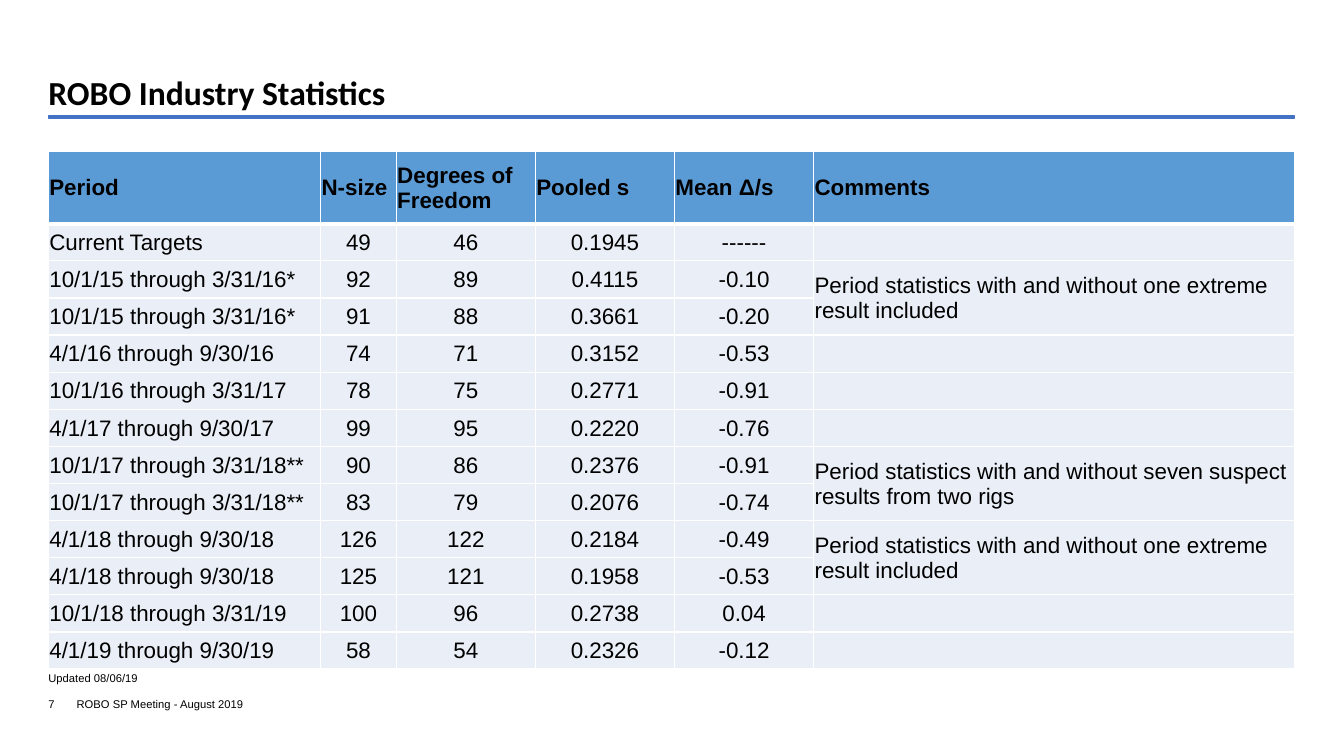
from lxml.etree import SubElement
from pptx import Presentation
from pptx.dml.color import RGBColor
from pptx.enum.shapes import MSO_SHAPE
from pptx.enum.text import MSO_ANCHOR, MSO_AUTO_SIZE, PP_ALIGN
from pptx.oxml.ns import qn
from pptx.util import Pt

EMU_PER_PX = 9144
BLACK = RGBColor(0x00, 0x00, 0x00)
WHITE = RGBColor(0xFF, 0xFF, 0xFF)
RULE_BLUE = RGBColor(0x44, 0x72, 0xC4)
HEADER_BLUE = RGBColor(0x5B, 0x9B, 0xD5)
BODY_BLUE = RGBColor(0xEA, 0xEF, 0xF7)

TITLE_FONT = {"name": "Calibri", "size": Pt(24), "bold": True}
HEADER_FONT = {"name": "Arial", "size": Pt(16), "bold": True}
BODY_FONT = {"name": "Arial", "size": Pt(16), "bold": False}
SMALL_FONT = {"name": "Arial", "size": Pt(8), "bold": False}

COLUMN_WIDTHS = [270, 75, 138, 138, 138, 477]
HEADER_HEIGHT = 72
HEADERS = ["Period", "N-size", "Degrees of Freedom", "Pooled s", "Mean Δ/s", "Comments"]
STATISTICS = [
    ["Current Targets", "49", "46", "0.1945", "------"],
    ["10/1/15 through 3/31/16*", "92", "89", "0.4115", "-0.10"],
    ["10/1/15 through 3/31/16*", "91", "88", "0.3661", "-0.20"],
    ["4/1/16 through 9/30/16", "74", "71", "0.3152", "-0.53"],
    ["10/1/16 through 3/31/17", "78", "75", "0.2771", "-0.91"],
    ["4/1/17 through 9/30/17", "99", "95", "0.2220", "-0.76"],
    ["10/1/17 through 3/31/18**", "90", "86", "0.2376", "-0.91"],
    ["10/1/17 through 3/31/18**", "83", "79", "0.2076", "-0.74"],
    ["4/1/18 through 9/30/18", "126", "122", "0.2184", "-0.49"],
    ["4/1/18 through 9/30/18", "125", "121", "0.1958", "-0.53"],
    ["10/1/18 through 3/31/19", "100", "96", "0.2738", "0.04"],
    ["4/1/19 through 9/30/19", "58", "54", "0.2326", "-0.12"],
]
# First table row of each two-row comment
COMMENTS = {
    2: "Period statistics with and without one extreme result included",
    7: "Period statistics with and without seven suspect results from two rigs",
    9: "Period statistics with and without one extreme result included",
}


def px(length):
    return round(length * EMU_PER_PX)


def set_values(target, values):
    for name, value in values.items():
        setattr(target, name, value)


def write(text_frame, text, font, alignment=PP_ALIGN.LEFT):
    paragraph = text_frame.paragraphs[0]
    paragraph.alignment = alignment
    run = paragraph.add_run()
    run.text = text
    set_values(run.font, font)
    run.font.color.rgb = BLACK


def format_frame(text_frame, anchor, wrap=True):
    set_values(text_frame, {
        "margin_left": 0, "margin_top": 0, "margin_right": 0, "margin_bottom": 0,
        "word_wrap": wrap, "auto_size": MSO_AUTO_SIZE.NONE, "vertical_anchor": anchor,
    })


def add_title(slide, left, top, width, height):
    title = slide.shapes.title
    set_values(title, {"left": px(left), "top": px(top), "width": px(width), "height": px(height)})
    format_frame(title.text_frame, MSO_ANCHOR.BOTTOM)
    write(title.text_frame, "ROBO Industry Statistics", TITLE_FONT)


def add_title_rule(slide, left, top, width, height):
    rule = slide.shapes.add_shape(MSO_SHAPE.RECTANGLE, px(left), px(top), px(width), px(height))
    rule.shadow.inherit = False
    rule.fill.solid()
    rule.fill.fore_color.rgb = RULE_BLUE
    rule.line.color.rgb = RULE_BLUE
    rule.line.width = Pt(1)


def add_small_text(slide, text, left, top, width, height, wrap=True):
    box = slide.shapes.add_textbox(px(left), px(top), px(width), px(height))
    format_frame(box.text_frame, MSO_ANCHOR.TOP, wrap)
    write(box.text_frame, text, SMALL_FONT)


def add_borders(cell, widths):
    """Draw white cell edges; widths maps each edge tag to points."""
    properties = cell._tc.get_or_add_tcPr()
    for tag, width in widths.items():
        line = SubElement(properties, qn(tag), w=str(Pt(width)))
        fill = SubElement(line, qn("a:solidFill"))
        SubElement(fill, qn("a:srgbClr"), val=str(WHITE))


def format_cell(cell, row):
    add_borders(cell, {
        "a:lnL": 1, "a:lnR": 1,
        "a:lnT": 3 if row == 1 else 1,
        "a:lnB": 3 if row == 0 else 1,
    })
    cell.fill.solid()
    cell.fill.fore_color.rgb = BODY_BLUE if row else HEADER_BLUE
    set_values(cell, {
        "margin_left": px(1), "margin_top": px(1), "margin_right": px(1), "margin_bottom": 0,
        "vertical_anchor": MSO_ANCHOR.MIDDLE,
    })


def add_statistics_table(slide, left, top, width, height):
    rows = [HEADERS] + [
        values + [COMMENTS.get(row, "")] for row, values in enumerate(STATISTICS, 1)
    ]
    frame = slide.shapes.add_table(
        len(rows), len(HEADERS), px(left), px(top), px(width), px(height))
    table = frame.table
    set_values(table, {"first_row": False, "horz_banding": False})
    for column, column_width in zip(table.columns, COLUMN_WIDTHS):
        column.width = px(column_width)
    body_height = (height - HEADER_HEIGHT) / len(STATISTICS)
    comment_column = len(HEADERS) - 1
    for row, values in enumerate(rows):
        table.rows[row].height = px(body_height if row else HEADER_HEIGHT)
        for column, text in enumerate(values):
            cell = table.cell(row, column)
            format_cell(cell, row)
            centred = row > 0 and 0 < column < comment_column
            if text:
                write(cell.text_frame, text, BODY_FONT if row else HEADER_FONT,
                      PP_ALIGN.CENTER if centred else PP_ALIGN.LEFT)
    for row in COMMENTS:
        table.cell(row, comment_column).merge(table.cell(row + 1, comment_column))


def add_footer(slide, left, top, width, height):
    number_width = 28
    add_small_text(slide, "7", left, top, number_width, height, wrap=False)
    add_small_text(slide, "ROBO SP Meeting - August 2019",
                   left + number_width, top, width - number_width, height)


def main():
    presentation = Presentation()
    presentation.slide_width = px(1333)
    presentation.slide_height = px(750)
    slide = presentation.slides.add_slide(presentation.slide_layouts[5])
    left, width = 48, 1236
    add_title_rule(slide, left, 115, width, 2)
    add_title(slide, left, 36, width, 75)
    add_statistics_table(slide, left, 150, width, 514)
    add_small_text(slide, "Updated 08/06/19", left, 666, 752, 13)
    add_footer(slide, left, 692, 963, 13)
    presentation.save("out.pptx")


if __name__ == "__main__":
    main()
